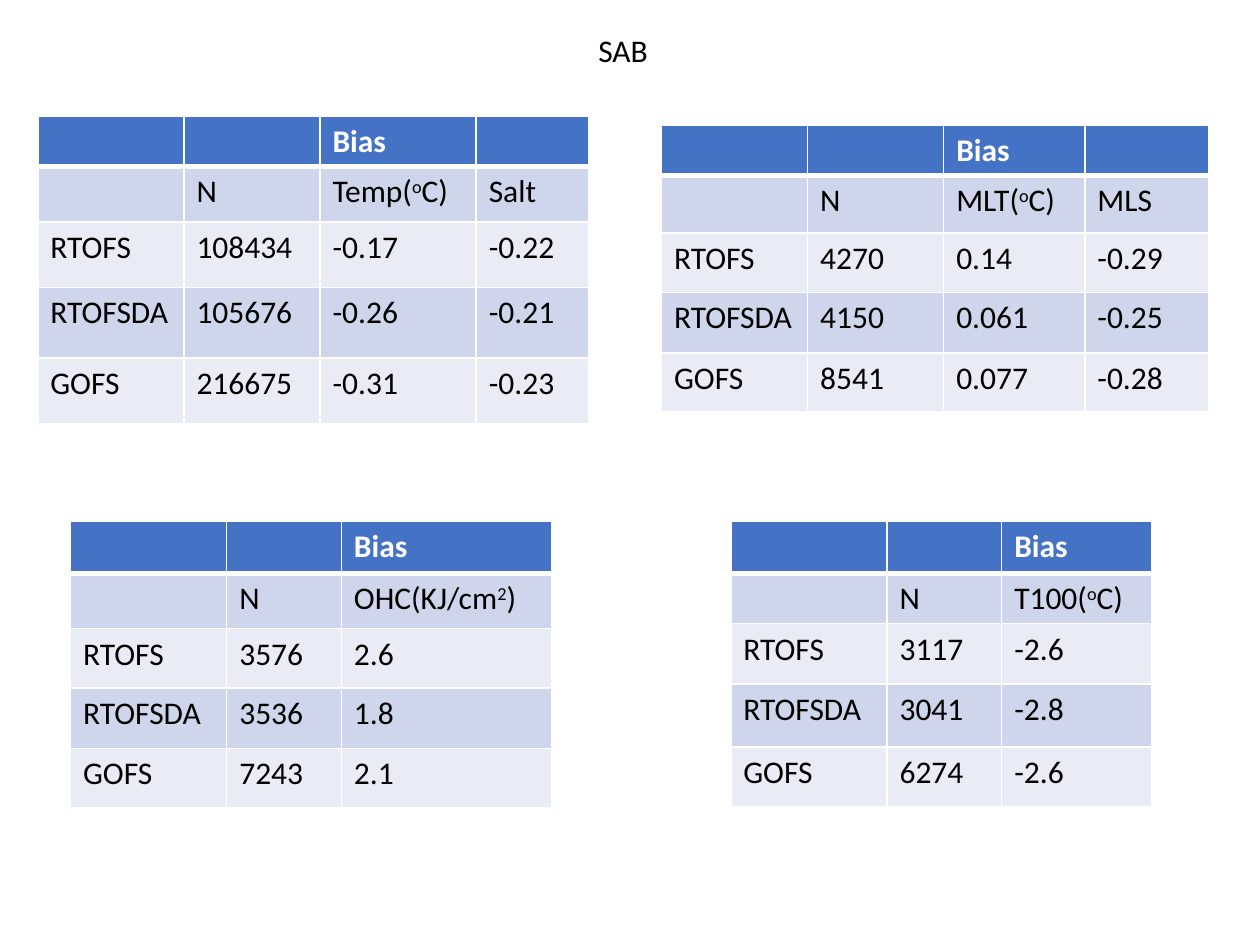
import dataclasses

import pptx
import pptx.dml.color
import pptx.enum.text
import pptx.oxml
import pptx.oxml.ns
import pptx.util

EMU_PER_PX = 9144
FONT = "Calibri"
HEADER, BAND_DARK, BAND_LIGHT = "4472C4", "CFD5EA", "E9EBF5"
WHITE, BLACK = "FFFFFF", "000000"
MODELS = ("RTOFS", "RTOFSDA", "GOFS")
SUPERSCRIPT_MARK = "^"


@dataclasses.dataclass(frozen=True)
class BiasTable:
    left: int
    top: int
    widths: tuple[int, ...]
    heights: tuple[int, ...]
    measures: tuple[str, ...]
    results: tuple[tuple[str, ...], ...]

    def rows(self) -> list[tuple[str, ...]]:
        blanks = ("",) * (len(self.measures) - 1)
        header = ("", "", "Bias") + blanks
        labels = ("", "N") + self.measures
        return [header, labels] + [
            (model, *values) for model, values in zip(MODELS, self.results)
        ]


BIAS_TABLES = (
    BiasTable(
        30, 92, (116, 108, 124, 89), (40, 44, 52, 56, 52),
        ("Temp(^o^C)", "Salt"),
        (("108434", "-0.17", "-0.22"), ("105676", "-0.26", "-0.21"), ("216675", "-0.31", "-0.23")),
    ),
    BiasTable(
        525, 99, (116, 108, 112, 98), (40, 46, 47, 48, 47),
        ("MLT(^o^C)", "MLS"),
        (("4270", "0.14", "-0.29"), ("4150", "0.061", "-0.25"), ("8541", "0.077", "-0.28")),
    ),
    BiasTable(
        56, 414, (124, 91, 167), (41, 44, 47, 48, 47),
        ("OHC(KJ/cm^2^)",),
        (("3576", "2.6"), ("3536", "1.8"), ("7243", "2.1")),
    ),
    BiasTable(
        580, 414, (124, 91, 119), (41, 38, 48, 50, 47),
        ("T100(^o^C)",),
        (("3117", "-2.6"), ("3041", "-2.8"), ("6274", "-2.6")),
    ),
)


def px(length: int) -> pptx.util.Emu:
    return pptx.util.Emu(length * EMU_PER_PX)


def rgb(value: str) -> pptx.dml.color.RGBColor:
    return pptx.dml.color.RGBColor.from_string(value)


def add_runs(paragraph, text: str, color: str, bold: bool = False) -> None:
    for index, piece in enumerate(text.split(SUPERSCRIPT_MARK)):
        if not piece:
            continue
        run = paragraph.add_run()
        run.text = piece
        run.font.name = FONT
        run.font.size = pptx.util.Pt(18)
        run.font.bold = bold
        run.font.color.rgb = rgb(color)
        if index % 2:
            run._r.get_or_add_rPr().set("baseline", "30000")


def set_borders(cell, top: int, bottom: int) -> None:
    properties = cell._tc.get_or_add_tcPr()
    for side, points in (("L", 1), ("R", 1), ("T", top), ("B", bottom)):
        properties.append(pptx.oxml.parse_xml(
            f'<a:ln{side} {pptx.oxml.ns.nsdecls("a")} w="{pptx.util.Pt(points)}">'
            f'<a:solidFill><a:srgbClr val="{WHITE}"/></a:solidFill></a:ln{side}>'
        ))


def draw_bias_table(slide, bias: BiasTable) -> None:
    rows = bias.rows()
    table = slide.shapes.add_table(
        len(rows), len(bias.widths), px(bias.left), px(bias.top),
        px(sum(bias.widths)), px(sum(bias.heights)),
    ).table
    for column, width in zip(table.columns, bias.widths):
        column.width = px(width)
    for index, (texts, height) in enumerate(zip(rows, bias.heights)):
        table.rows[index].height = px(height)
        is_header = index == 0
        fill = HEADER if is_header else BAND_DARK if index % 2 else BAND_LIGHT
        for cell, text in zip(table.rows[index].cells, texts):
            set_borders(cell, 3 if index == 1 else 1, 3 if is_header else 1)
            cell.fill.solid()
            cell.fill.fore_color.rgb = rgb(fill)
            add_runs(cell.text_frame.paragraphs[0], text, WHITE if is_header else BLACK, is_header)


def draw_region_title(slide, region: str) -> None:
    frame = slide.shapes.add_textbox(px(465), px(20), px(60), px(40)).text_frame
    frame.word_wrap = False
    frame.auto_size = pptx.enum.text.MSO_AUTO_SIZE.SHAPE_TO_FIT_TEXT
    add_runs(frame.paragraphs[0], region, BLACK)


def main() -> None:
    presentation = pptx.Presentation()
    presentation.slide_width = px(1000)
    presentation.slide_height = px(750)
    slide = presentation.slides.add_slide(presentation.slide_layouts[6])
    draw_region_title(slide, "SAB")
    for bias in BIAS_TABLES:
        draw_bias_table(slide, bias)
    presentation.save("out.pptx")


if __name__ == "__main__":
    main()
